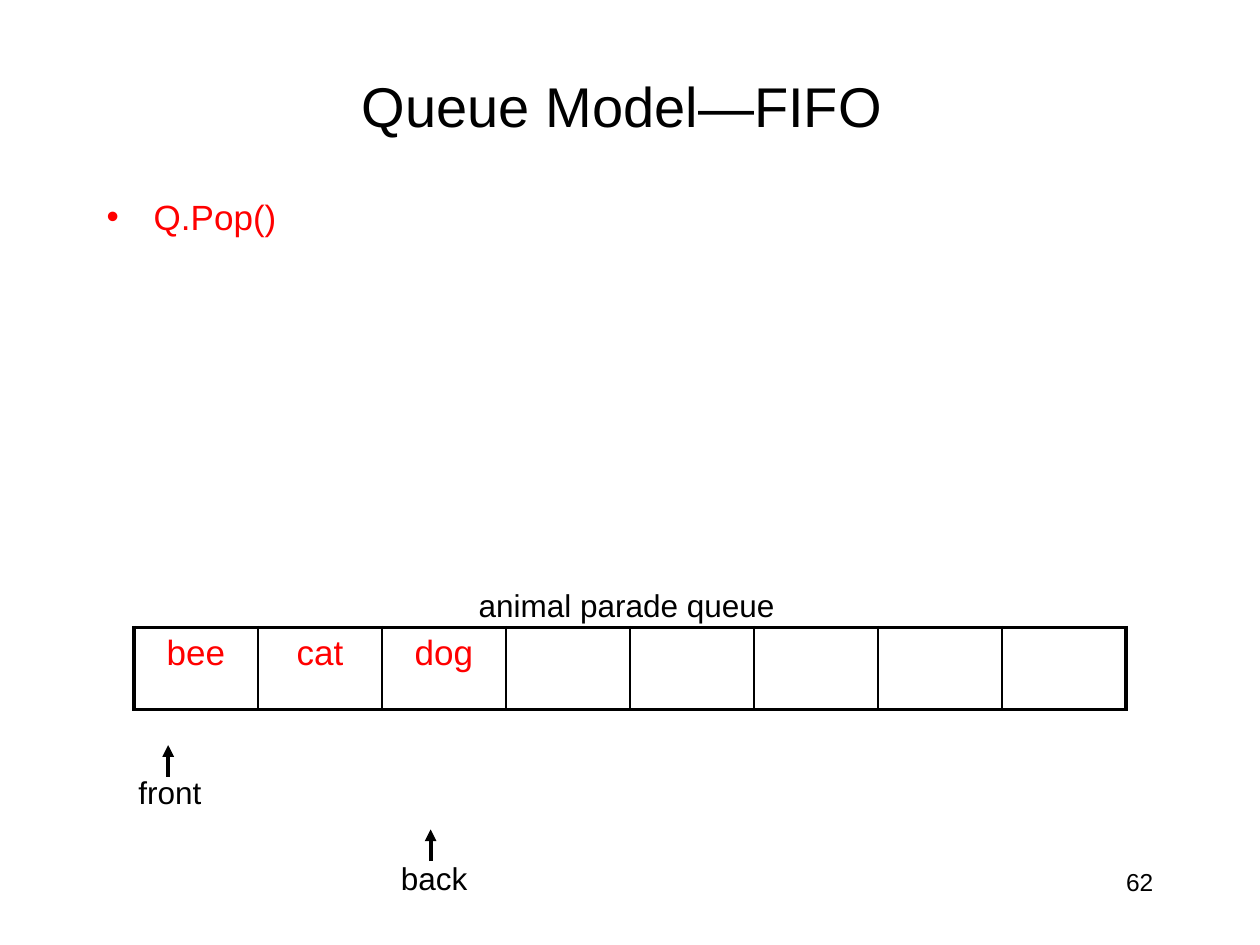
from dataclasses import dataclass

from lxml import etree
from pptx import Presentation
from pptx import util as u
from pptx.dml.color import RGBColor
from pptx.enum import shapes, text
from pptx.oxml import ns

BLACK, RED = "000000", "FF0000"
THICK, THIN = 2.25, 1
CAPACITY = 8
ANIMALS = ["bee", "cat", "dog"]


@dataclass
class Label:
    words: str
    left: float
    top: float
    width: float
    height: float
    size: int = 18
    colour: str = BLACK
    align: text.PP_ALIGN = text.PP_ALIGN.LEFT
    anchor: text.MSO_ANCHOR = text.MSO_ANCHOR.TOP
    wrap: bool = True
    bullet: bool = False


@dataclass
class Pointer:
    label: Label
    x: float
    tail_y: float
    length: float = 0.64


def rgb(colour: str) -> RGBColor:
    return RGBColor.from_string(colour)


def add_child(parent, tag: str, **attributes: str):
    child = etree.SubElement(parent, ns.qn(tag))
    for key, value in attributes.items():
        child.set(key, value)
    return child


def style_font(font, size: int, colour: str) -> None:
    for key, value in {"name": "Arial", "size": u.Pt(size)}.items():
        setattr(font, key, value)
    font.color.rgb = rgb(colour)


def draw_label(slide, label: Label) -> None:
    box = slide.shapes.add_textbox(
        *map(u.Cm, (label.left, label.top, label.width, label.height)))
    frame = box.text_frame
    for key, value in {"word_wrap": label.wrap,
                       "vertical_anchor": label.anchor}.items():
        setattr(frame, key, value)
    paragraph = frame.paragraphs[0]
    paragraph.alignment = label.align
    if label.bullet:
        properties = paragraph._p.get_or_add_pPr()
        indent = u.Cm(0.95)
        properties.set("marL", str(indent))
        properties.set("indent", str(-indent))
        add_child(properties, "a:buFont", typeface="Arial")
        add_child(properties, "a:buChar", char="•")
    run = paragraph.add_run()
    run.text = label.words
    style_font(run.font, label.size, label.colour)


def draw_pointer(slide, pointer: Pointer) -> None:
    draw_label(slide, pointer.label)
    arrow = slide.shapes.add_connector(
        shapes.MSO_CONNECTOR.STRAIGHT, u.Cm(pointer.x), u.Cm(pointer.tail_y),
        u.Cm(pointer.x), u.Cm(pointer.tail_y - pointer.length))
    arrow.line.color.rgb = rgb(BLACK)
    arrow.line.width = u.Pt(THICK)
    add_child(arrow.line._get_or_add_ln(), "a:tailEnd", type="triangle")
    add_child(arrow._element.spPr, "a:effectLst")


def draw_border(cell, side: str, width: float) -> None:
    edge = add_child(cell._tc.get_or_add_tcPr(), f"a:ln{side}",
                     w=str(u.Pt(width)))
    add_child(add_child(edge, "a:solidFill"), "a:srgbClr", val=BLACK)


def draw_queue(slide, animals: list[str]) -> None:
    table = slide.shapes.add_table(
        1, CAPACITY, u.Cm(2.7), u.Cm(12.65), u.Cm(20), u.Cm(1.65)).table
    for key in ("first_row", "horz_banding"):
        setattr(table, key, False)
    for index, cell in enumerate(table.iter_cells()):
        widths = {"L": THICK if index == 0 else THIN,
                  "R": THICK if index == CAPACITY - 1 else THIN,
                  "T": THICK, "B": THICK}
        for side, width in widths.items():
            draw_border(cell, side, width)
        cell.fill.background()
        paragraph = cell.text_frame.paragraphs[0]
        paragraph.alignment = text.PP_ALIGN.CENTER
        if index < len(animals):
            run = paragraph.add_run()
            run.text = animals[index]
            style_font(run.font, 20, RED)


def main() -> None:
    deck = Presentation()
    deck.slide_width, deck.slide_height = u.Cm(25.4), u.Cm(19.05)
    slide = deck.slides.add_slide(deck.slide_layouts[6])

    # Page number, title and operation
    for label in (
        Label("62", 18.2, 17.35, 5.3, 1.27, 14, align=text.PP_ALIGN.RIGHT),
        Label("Queue Model—FIFO ", 1.9, 1.06, 21.6, 2.12, 32,
              align=text.PP_ALIGN.CENTER, anchor=text.MSO_ANCHOR.MIDDLE),
        Label("Q.Pop()", 1.9, 3.81, 21.6, 6.35, 20, RED, bullet=True),
    ):
        draw_label(slide, label)

    # Queue with its caption
    draw_queue(slide, ANIMALS)
    draw_label(slide, Label("animal parade queue", 9.4, 11.68, 6.48, 1.02,
                            wrap=False))

    # Front and back pointers
    for pointer in (
        Pointer(Label("front", 2.54, 15.45, 1.78, 1.02, wrap=False),
                3.39, 15.66),
        Pointer(Label("back", 7.83, 17.2, 1.85, 1.02, wrap=False),
                8.68, 17.36),
    ):
        draw_pointer(slide, pointer)

    deck.save("out.pptx")


if __name__ == "__main__":
    main()
